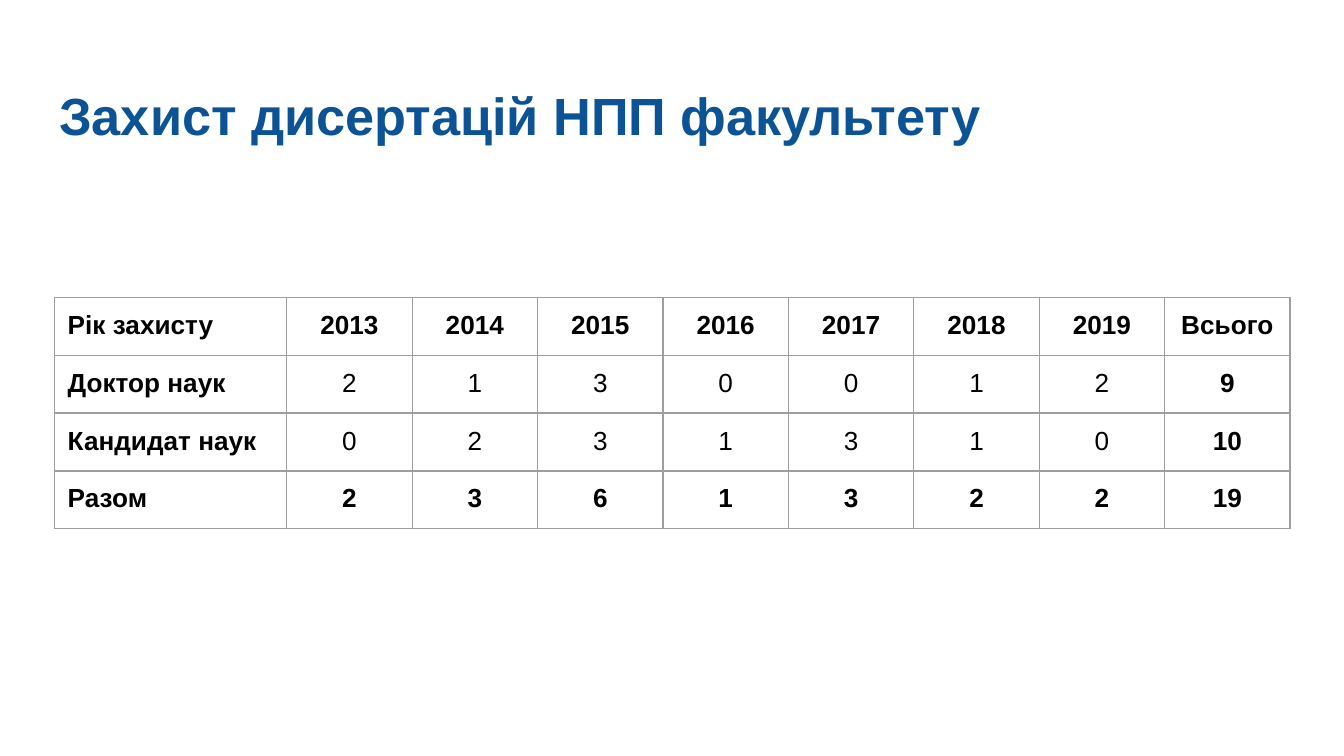
import pptx
import pptx.util
import pptx.dml.color
import pptx.enum.text
import pptx.oxml

Cm = pptx.util.Cm
Pt = pptx.util.Pt
ALIGN = pptx.enum.text.PP_ALIGN

COLORS = {"title": "0B5394", "text": "000000", "line": "9E9E9E"}

YEARS = range(2013, 2020)
DEGREES = {
    "Доктор наук": [2, 1, 3, 0, 0, 1, 2],
    "Кандидат наук": [0, 2, 3, 1, 3, 1, 0],
}


def write(frame, text, size=14, color="text", bold=False, align=ALIGN.LEFT):
    """Put one formatted paragraph into a text frame."""
    para = frame.paragraphs[0]
    para.alignment = align
    run = para.add_run()
    run.text = str(text)
    font = run.font
    font.name = "Arial"
    font.size = Pt(size)
    font.bold = bold
    font.color.rgb = pptx.dml.color.RGBColor.from_string(COLORS[color])


class Deck:
    """Holds the shared style and the current slide."""

    pad = Cm(0.25)
    line = Pt(0.75)

    def __init__(self, slide):
        self.slide = slide

    def title(self, text, left, top, width, height):
        box = self.slide.shapes.add_textbox(left, top, width, height)
        frame = box.text_frame
        frame.word_wrap = True
        frame.margin_left = frame.margin_right = self.pad
        frame.margin_top = Cm(0.33)
        write(frame, text, size=28, color="title", bold=True)

    def border(self, cell):
        props = cell._tc.get_or_add_tcPr()
        space = pptx.oxml.ns.nsdecls("a")
        for place, side in enumerate("LRTB"):
            edge = pptx.oxml.parse_xml(
                f'<a:ln{side} {space} w="{int(self.line)}"><a:solidFill>'
                f'<a:srgbClr val="{COLORS["line"]}"/></a:solidFill></a:ln{side}>'
            )
            props.insert(place, edge)

    def table(self, rows, left, top, widths, height):
        frame = self.slide.shapes.add_table(
            len(rows), len(widths), left, top, sum(widths), height * len(rows)
        )
        table = frame.table
        table.first_row = table.horz_banding = False
        for col, width in zip(table.columns, widths):
            col.width = width
        for r, row in enumerate(rows):
            table.rows[r].height = height
            for c, value in enumerate(row):
                cell = table.cell(r, c)
                cell.margin_left = cell.margin_right = self.pad
                cell.margin_top = cell.margin_bottom = self.pad
                cell.fill.background()
                self.border(cell)
                # The outer rows and columns are bold
                outer = r in (0, len(rows) - 1) or c in (0, len(row) - 1)
                align = ALIGN.CENTER if c else ALIGN.LEFT
                write(cell.text_frame, value, bold=outer, align=align)


def main():
    show = pptx.Presentation()
    show.slide_width = Cm(25.4)
    show.slide_height = Cm(14.29)
    deck = Deck(show.slides.add_slide(show.slide_layouts[6]))

    # Heading
    deck.title("Захист дисертацій НПП факультету",
               Cm(0.87), Cm(1.24), Cm(23.67), Cm(1.6))

    # Counts by degree and year, with totals both ways
    sums = [sum(pair) for pair in zip(*DEGREES.values())]
    rows = [["Рік захисту", *YEARS, "Всього"]]
    for name, counts in [*DEGREES.items(), ("Разом", sums)]:
        rows.append([name, *counts, sum(counts)])
    widths = [Cm(4.39)] + [Cm(2.37)] * (len(YEARS) + 1)
    deck.table(rows, Cm(1.03), Cm(5.62), widths, Cm(1.06))

    show.save("out.pptx")


if __name__ == "__main__":
    main()
